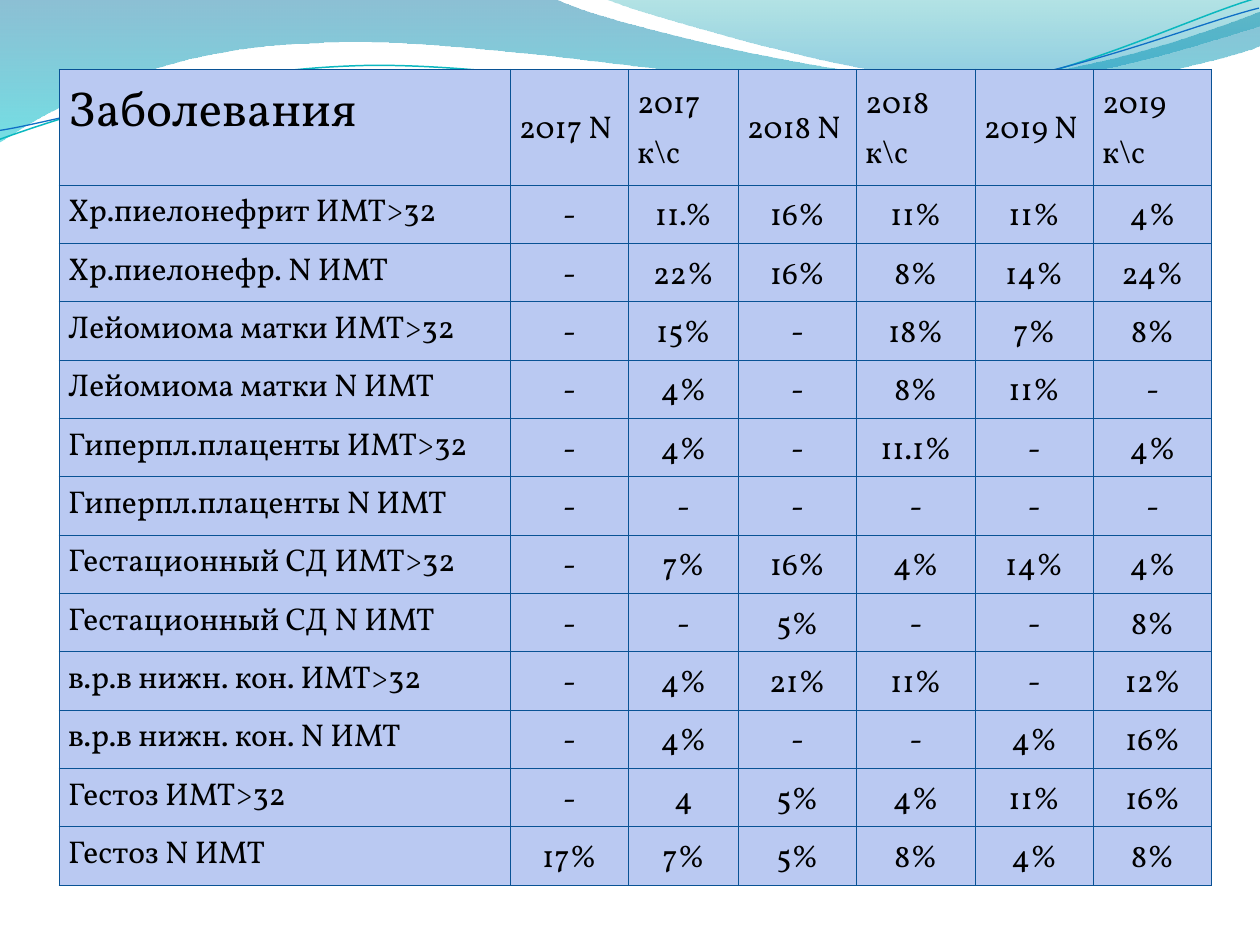
from dataclasses import dataclass

from lxml import etree
from pptx import Presentation
from pptx import util as u
from pptx.dml.color import RGBColor
from pptx.enum import text
from pptx.oxml.ns import qn


@dataclass(frozen=True)
class Theme:
    font: str = "Vollkorn"
    ink: str = "000000"
    cell: str = "BAC9F2"
    border: str = "095295"
    border_width: float = 0.75
    title_size: int = 28
    body_size: int = 18
    # Gradient stops: colour, opacity in percent
    wide_wave: tuple = (("0074A1", 45), ("00C6CF", 55))
    right_wave: tuple = (("00A1A9", 30), ("008BBF", 45))
    teal_line: str = "0AB8BF"
    blue_line: str = "0F6FC6"


THEME = Theme()
CURVE_ROTATION = 357.3

# Wave outlines: a two-number step is a straight line, a six-number step a Bezier curve
WIDE_WAVE = [
    (0, 0), (4.4, -0.01),
    (4.76, 0.17, 6.64, 0.63, 7.58, 0.63), (8.53, 0.63, 9.58, 0.26, 10, 0.09),
    (10.01, 0.36),
    (9.83, 0.44, 8.7, 0.76, 7.46, 0.75), (6.22, 0.75, 3.82, 0.28, 2.57, 0.34),
    (1.29, 0.36, 0.46, 0.83, -0.01, 1.13), (0, 0),
]
RIGHT_WAVE = [
    (4.79, -0.01),
    (5.09, 0.11, 6.82, 0.62, 7.69, 0.65), (8.56, 0.69, 9.61, 0.32, 10, 0.21),
    (10, 0), (4.79, -0.01),
]
# The thin curves are given before rotation
TEAL_CURVE = [
    (-0.02, 0.87),
    (0.47, 0.72, 1.58, 0.41, 2.78, 0.42), (3.96, 0.42, 5.91, 0.93, 7.12, 0.9),
    (8.32, 0.87, 9.4, 0.36, 10, 0.22),
]
BLUE_CURVE = [
    (-0.02, 0.8),
    (0.46, 0.75, 1.64, 0.45, 2.83, 0.46), (4.03, 0.46, 5.96, 0.88, 7.16, 0.85),
    (8.35, 0.83, 9.42, 0.42, 10.01, 0.3),
]

HEADER = ["Заболевания", "2017 N", "2017 к\\с", "2018 N", "2018 к\\с", "2019 N", "2019 к\\с"]
DISEASES = [
    ("Хр.пиелонефрит ИМТ>32", "- 11.% 16% 11% 11% 4%"),
    ("Хр.пиелонефр. N ИМТ", "- 22% 16% 8% 14% 24%"),
    ("Лейомиома матки ИМТ>32", "- 15% - 18% 7% 8%"),
    ("Лейомиома матки N ИМТ", "- 4% - 8% 11% -"),
    ("Гиперпл.плаценты ИМТ>32", "- 4% - 11.1% - 4%"),
    ("Гиперпл.плаценты N ИМТ", "- - - - - -"),
    ("Гестационный СД ИМТ>32", "- 7% 16% 4% 14% 4%"),
    ("Гестационный СД N ИМТ", "- - 5% - - 8%"),
    ("в.р.в нижн. кон. ИМТ>32", "- 4% 21% 11% - 12%"),
    ("в.р.в нижн. кон. N ИМТ", "- 4% - - 4% 16%"),
    ("Гестоз ИМТ>32", "- 4 5% 4% 11% 16%"),
    ("Гестоз N ИМТ", "17% 7% 5% 8% 4% 8%"),
]


def color(value):
    return RGBColor.from_string(value)


def add_outline(shapes, left, top, steps, close):
    """Draw a freeform whose six-number steps become Bezier curves."""
    points = [(left + u.Inches(step[i]), top + u.Inches(step[i + 1]))
              for step in steps for i in range(0, len(step), 2)]
    builder = shapes.build_freeform(*points[0], scale=1.0)
    builder.add_line_segments(points[1:], close=close)
    shape = builder.convert_to_shape()
    shape.shadow.inherit = False

    # Join each run of three segments into one curve
    segments = iter(list(shape._element.iter(qn("a:lnTo"))))
    for step in steps[1:]:
        first = next(segments)
        if len(step) == 6:
            curve = etree.Element(qn("a:cubicBezTo"))
            first.addprevious(curve)
            for segment in (first, next(segments), next(segments)):
                curve.append(segment[0])
                segment.getparent().remove(segment)
    return shape


def add_waves(slide, left, top):
    # Translucent bands
    for steps, stops in ((WIDE_WAVE, THEME.wide_wave), (RIGHT_WAVE, THEME.right_wave)):
        band = add_outline(slide.shapes, left, top, steps, close=True)
        band.line.fill.background()
        band.fill.gradient()
        band.fill.gradient_angle = 270
        for stop, (value, _) in zip(band.fill.gradient_stops, stops):
            stop.color.rgb = color(value)
        for node, (_, opacity) in zip(band._element.iter(qn("a:srgbClr")), stops):
            etree.SubElement(node, qn("a:alpha"), val=str(opacity * 1000))

    # Thin curves, grouped
    group = slide.shapes.add_group_shape()
    for steps, value, width in ((TEAL_CURVE, THEME.teal_line, 0.85),
                                (BLUE_CURVE, THEME.blue_line, 0.75)):
        curve = add_outline(group.shapes, left, top, steps, close=False)
        curve.rotation = CURVE_ROTATION
        curve.fill.background()
        curve.line.color.rgb = color(value)
        curve.line.width = u.Pt(width)


def add_borders(cell):
    properties = cell._tc.get_or_add_tcPr()
    for side in ("lnL", "lnR", "lnT", "lnB"):
        line = etree.SubElement(properties, qn(f"a:{side}"),
                                w=str(u.Pt(THEME.border_width)))
        fill = etree.SubElement(line, qn("a:solidFill"))
        etree.SubElement(fill, qn("a:srgbClr"), val=THEME.border)


def fill_cell(cell, words, size, centered, middle):
    add_borders(cell)
    cell.fill.solid()
    cell.fill.fore_color.rgb = color(THEME.cell)
    cell.margin_left = cell.margin_right = u.Inches(0.07)
    cell.margin_top = cell.margin_bottom = 0
    cell.vertical_anchor = text.MSO_ANCHOR.MIDDLE if middle else text.MSO_ANCHOR.TOP
    paragraph = cell.text_frame.paragraphs[0]
    paragraph.alignment = text.PP_ALIGN.CENTER if centered else text.PP_ALIGN.LEFT
    paragraph.line_spacing = 1.15
    run = paragraph.add_run()
    run.text = words
    run.font.name = THEME.font
    run.font.size = u.Pt(size)
    run.font.color.rgb = color(THEME.ink)


def add_disease_table(slide, left, top, width, height):
    rows = [HEADER] + [[name, *values.split()] for name, values in DISEASES]
    frame = slide.shapes.add_table(len(rows), len(HEADER), left, top, width, height)
    table = frame.table
    table.first_row = table.horz_banding = False

    # Column widths and row heights
    for column, inches in zip(table.columns, [3.58, 0.94, 0.87] + [0.94] * 4):
        column.width = u.Inches(inches)
    header_height = u.Inches(0.92)
    for index, row in enumerate(table.rows):
        row.height = (height - header_height) // len(DISEASES) if index else header_height

    # Cell contents
    for r, values in enumerate(rows):
        for c, words in enumerate(values):
            size = THEME.title_size if r == c == 0 else THEME.body_size
            fill_cell(table.cell(r, c), words, size,
                      centered=r > 0 and c > 0, middle=c > 0)


def main():
    presentation = Presentation()
    presentation.slide_width = u.Inches(10)
    presentation.slide_height = u.Inches(7.5)
    slide = presentation.slides.add_slide(presentation.slide_layouts[6])
    add_waves(slide, u.Inches(0), u.Inches(0))
    add_disease_table(slide, u.Inches(0.47), u.Inches(0.55), u.Inches(9.14), u.Inches(6.48))
    presentation.save("out.pptx")


if __name__ == "__main__":
    main()
